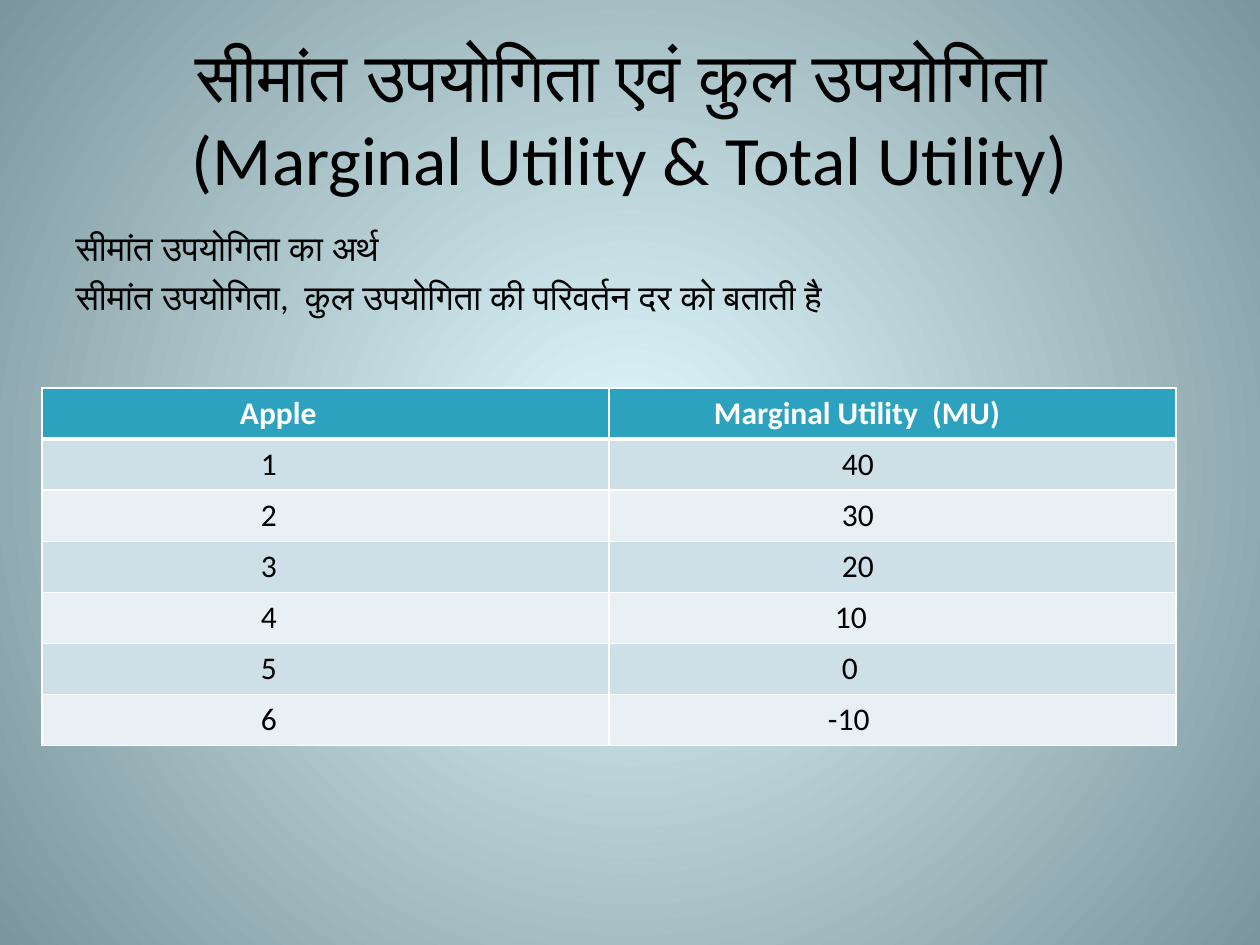
from lxml.etree import SubElement
from pptx import Presentation
from pptx.dml.color import RGBColor
from pptx.enum.text import MSO_ANCHOR as Anchor, PP_ALIGN as Align
from pptx.oxml.ns import qn
from pptx.util import Emu, Pt

FONT = "Calibri"
BLACK, WHITE, TEAL = "000000", "FFFFFF", "2DA2BF"
BANDS = ("CDE0E8", "E8F0F4")


def px(n):
    return Emu(round(n * 914400 / 126))


def rgb(value):
    return RGBColor.from_string(value)


class Deck:
    def __init__(self, width, height):
        self.prs = Presentation()
        self.prs.slide_width, self.prs.slide_height = px(width), px(height)
        self.s = self.prs.slides.add_slide(self.prs.slide_layouts[1])

    def background(self, inner, outer):
        """Circular gradient from the centre of the slide."""
        fill = self.s.background.fill
        fill.gradient()
        for stop, value in zip(fill.gradient_stops, (inner, outer)):
            stop.color.rgb = rgb(value)
        grad = self.s.element.find(".//" + qn("a:gradFill"))
        grad.remove(grad.find(qn("a:lin")))
        circle = SubElement(grad, qn("a:path"), path="circle")
        SubElement(circle, qn("a:fillToRect"),
                   {side: "50000" for side in "ltrb"})

    def place(self, sp, box):
        sp.left, sp.top, sp.width, sp.height = map(px, box)

    def run(self, p, text, size, color=BLACK, bold=False):
        r = p.add_run()
        r.text = text
        r.font.name, r.font.size, r.font.bold = FONT, Pt(size), bold
        r.font.color.rgb = rgb(color)

    def title(self, lines, box, size):
        sp = self.s.shapes.title
        self.place(sp, box)
        tf = sp.text_frame
        tf.vertical_anchor = Anchor.MIDDLE
        p = tf.paragraphs[0]
        p.alignment = Align.CENTER
        for i, line in enumerate(lines):
            if i:
                p.add_line_break()
            self.run(p, line, size)

    def body(self, lines, box, size):
        sp = self.s.placeholders[1]
        self.place(sp, box)
        tf = sp.text_frame
        for i, line in enumerate(lines):
            p = tf.add_paragraph() if i else tf.paragraphs[0]
            pPr = p._p.get_or_add_pPr()
            pPr.set("marL", str(px(47)))
            pPr.set("indent", str(-px(47)))
            SubElement(pPr, qn("a:buNone"))
            self.run(p, line, size)

    def border(self, cell, side, width):
        ln = SubElement(cell._tc.get_or_add_tcPr(), qn("a:ln" + side),
                        w=str(Pt(width)))
        fill = SubElement(ln, qn("a:solidFill"))
        SubElement(fill, qn("a:srgbClr"), val=WHITE)

    def table(self, rows, left, top, col_width, row_height, size):
        """Each cell is a pair: its text and its left inset in px."""
        n_rows, n_cols = len(rows), len(rows[0])
        table = self.s.shapes.add_table(
            n_rows, n_cols, px(left), px(top),
            px(n_cols * col_width), px(n_rows * row_height)).table
        for i, row in enumerate(rows):
            header = i == 0
            table.rows[i].height = px(row_height)
            for j, (text, inset) in enumerate(row):
                cell = table.cell(i, j)
                cell.margin_left = px(inset)
                # Borders come before the fill; the header rule is thicker
                for side in "LRTB":
                    thick = (i, side) in ((0, "B"), (1, "T"))
                    self.border(cell, side, 3 if thick else 1)
                cell.fill.solid()
                cell.fill.fore_color.rgb = rgb(
                    TEAL if header else BANDS[(i - 1) % 2])
                self.run(cell.text_frame.paragraphs[0], text, size,
                         WHITE if header else BLACK, header)


def main():
    deck = Deck(1260, 945)
    deck.background("E1FAFF", "7B969C")

    # Heading and definition
    deck.title(["सीमांत उपयोगिता एवं कुल उपयोगिता ",
                "(Marginal Utility & Total Utility)"],
               (63, 38, 1134, 157), 39.6)
    deck.body(["सीमांत उपयोगिता का अर्थ",
               "सीमांत उपयोगिता,  कुल उपयोगिता की परिवर्तन दर को बताती है"],
              (63, 220, 1134, 210), 20)

    # Utility schedule
    utilities = [("40", 233), ("30", 233), ("20", 233),
                 ("10", 226), ("0", 233), ("-10", 219)]
    rows = [[("Apple", 198), ("Marginal Utility  (MU)", 105)]]
    rows += [[(str(n), 219), mu] for n, mu in enumerate(utilities, 1)]
    deck.table(rows, 42, 388, 567, 51, 18)

    deck.prs.save("out.pptx")


if __name__ == "__main__":
    main()
